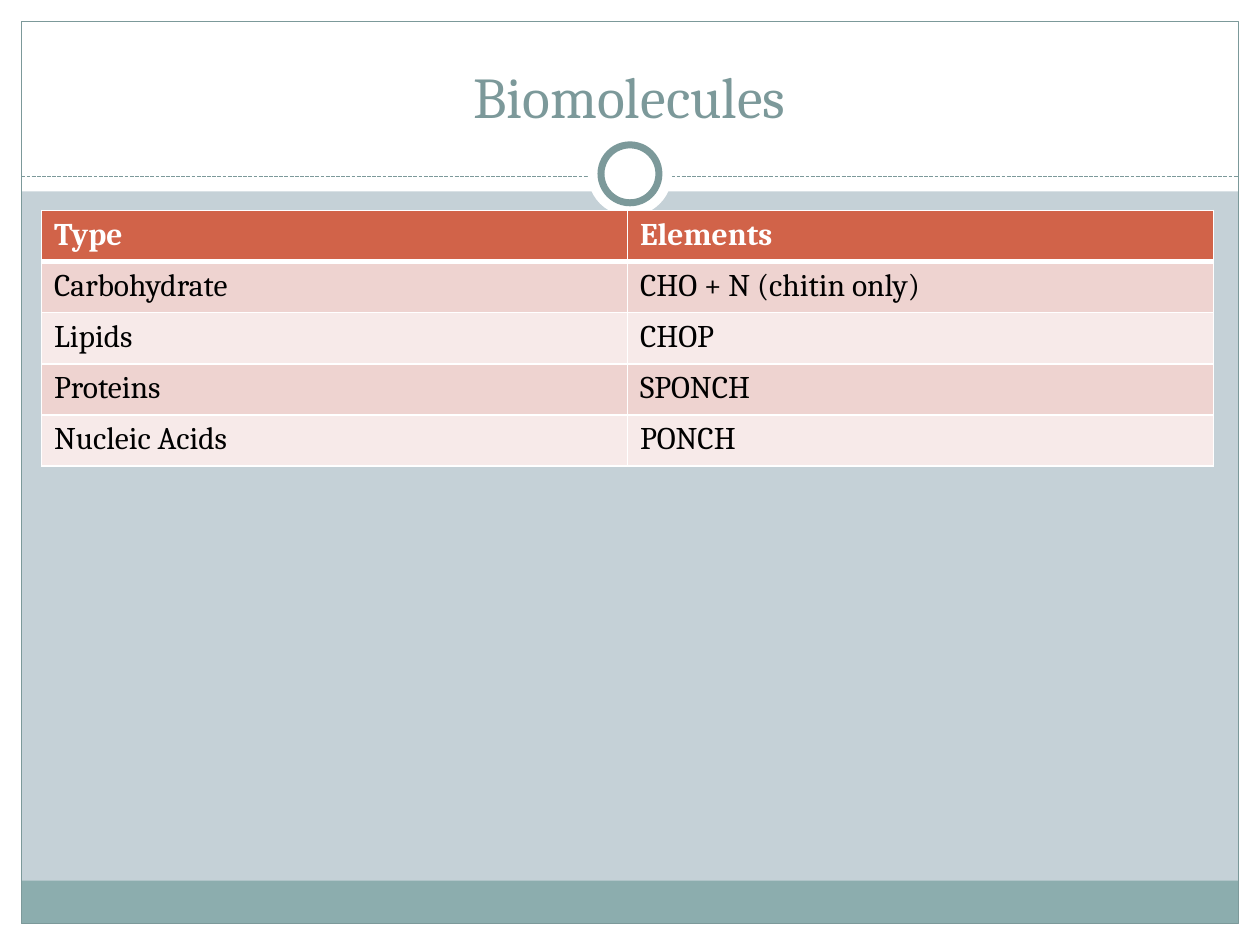
from lxml.etree import SubElement
from pptx import Presentation
from pptx.dml.color import RGBColor
from pptx.enum.dml import MSO_LINE
from pptx.enum.shapes import MSO_CONNECTOR, MSO_SHAPE
from pptx.enum.text import MSO_ANCHOR, PP_ALIGN
from pptx.oxml.ns import qn
from pptx.util import Inches, Pt

FONT = "Cambria"
WHITE, TEAL, FOOTER = "FFFFFF", "7C999A", "8CADAE"
BACKGROUND, HEADER = "C5D1D7", "D16349"
BANDS = ["EED3D0", "F7EAE9"]
ROWS = [
    ("Type", "Elements"),
    ("Carbohydrate", "CHO + N (chitin only)"),
    ("Lipids", "CHOP"),
    ("Proteins", "SPONCH"),
    ("Nucleic Acids", "PONCH"),
]


def color(value):
    return RGBColor.from_string(value)


def inches(box):
    return [Inches(length) for length in box]


def format_text(span, fill, **values):
    for name, value in {"name": FONT, **values}.items():
        setattr(span.font, name, value)
    span.font.color.rgb = color(fill)


def add_part(page, kind, box, fill=None, line=None, width=0.75):
    shape = page.shapes.add_shape(kind, *inches(box))
    shape.shadow.inherit = False
    if fill:
        shape.fill.solid()
        shape.fill.fore_color.rgb = color(fill)
    else:
        shape.fill.background()
    if line:
        shape.line.color.rgb = color(line)
        shape.line.width = Pt(width)
    else:
        shape.line.fill.background()


def add_frame(page, box):
    left, top, width, height = box
    margin, band_height, footer_height = 0.17, 1.52, 0.34
    inner_width, inner_height = width - 2 * margin, height - 2 * margin
    right, bottom = left + width - margin, top + height - margin

    # White margins and title band
    for edge in [
        (left, bottom, width, margin),
        (left, top, width, band_height),
        (left, top, margin, height),
        (right, top, margin, height),
    ]:
        add_part(page, MSO_SHAPE.RECTANGLE, edge, WHITE)

    # Footer band and outline
    footer = (left + margin, bottom - footer_height, inner_width, footer_height)
    add_part(page, MSO_SHAPE.RECTANGLE, footer, FOOTER)
    outline = (left + margin, top + margin, inner_width, inner_height)
    add_part(page, MSO_SHAPE.RECTANGLE, outline, line=TEAL)

    # Dashed divider
    ends = inches((left + margin, top + 1.4, right, top + 1.4))
    divider = page.shapes.add_connector(MSO_CONNECTOR.STRAIGHT, *ends)
    divider.line.color.rgb = color(TEAL)
    divider.line.width = Pt(0.75)
    divider.line.dash_style = MSO_LINE.SQUARE_DOT
    SubElement(divider._element.spPr, qn("a:effectLst"))

    # Ring on a white disc
    center_x, center_y = left + width / 2, top + 1.38
    for size, line in [(0.67, None), (0.46, TEAL)]:
        disc = (center_x - size / 2, center_y - size / 2, size, size)
        add_part(page, MSO_SHAPE.OVAL, disc, WHITE, line, 4)


def add_title(page, box, text):
    title = page.shapes.title
    title.left, title.top, title.width, title.height = inches(box)
    page.shapes._spTree.append(title._element)  # in front of the white band
    title.text_frame.vertical_anchor = MSO_ANCHOR.BOTTOM
    para = title.text_frame.paragraphs[0]
    para.alignment = PP_ALIGN.CENTER
    span = para.add_run()
    span.text = text
    format_text(span, TEAL, size=Pt(33))


def add_borders(cell, widths):
    properties = cell._tc.get_or_add_tcPr()
    for side, width in widths.items():
        border = SubElement(properties, qn(f"a:ln{side}"), w=str(Pt(width)))
        fill = SubElement(border, qn("a:solidFill"))
        SubElement(fill, qn("a:srgbClr"), val=WHITE)


def add_element_table(page, box, rows):
    frame = page.shapes.add_table(len(rows), len(rows[0]), *inches(box))
    table = frame.table
    for row_index, texts in enumerate(rows):
        is_header = row_index == 0
        fill = HEADER if is_header else BANDS[(row_index - 1) % 2]
        widths = {
            "L": 1,
            "R": 1,
            "T": 3 if row_index == 1 else 1,
            "B": 3 if is_header else 1,
        }
        for column_index, text in enumerate(texts):
            cell = table.cell(row_index, column_index)
            add_borders(cell, widths)
            cell.fill.solid()
            cell.fill.fore_color.rgb = color(fill)
            span = cell.text_frame.paragraphs[0].add_run()
            span.text = text
            format_text(span, WHITE if is_header else "000000",
                        size=Pt(18), bold=is_header)


def main():
    deck = Presentation()
    deck.slide_width, deck.slide_height = Inches(10), Inches(7.5)
    page = deck.slides.add_slide(deck.slide_layouts[5])
    page.background.fill.solid()
    page.background.fill.fore_color.rgb = color(BACKGROUND)
    add_frame(page, (0, 0, 10, 7.5))
    add_title(page, (0.33, 0.25, 9.33, 0.83), "Biomolecules")
    add_element_table(page, (0.33, 1.67, 9.3, 2.03), ROWS)
    deck.save("out.pptx")


if __name__ == "__main__":
    main()
